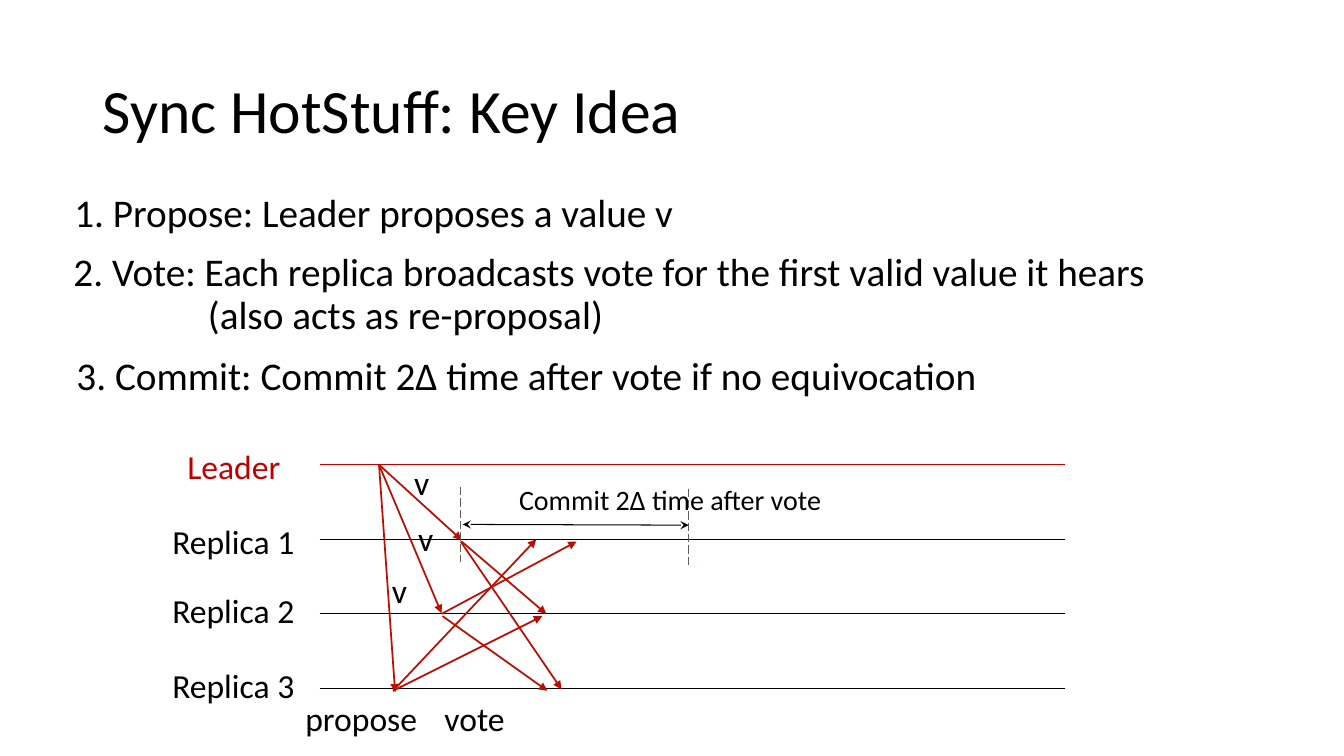
from dataclasses import dataclass

from pptx import Presentation
from pptx import util as u
from pptx.dml import color
from pptx.enum import dml, shapes, text
from pptx.oxml import ns, xmlchemy

WIDTH, HEIGHT = u.Inches(13.33), u.Inches(7.5)
BLACK, LEADER_RED, MESSAGE_RED, GRAY, WHITE = "000000", "C00000", "B91003", "635E5D", "FFFFFF"
FIRST_LANE, LANE_GAP = 61.47, 9.87
LANE_START, LANE_END = 23.78, 79.28
PLAIN_MARGINS = {"margin_left": u.Inches(0.1), "margin_right": u.Inches(0.1),
                 "margin_top": u.Inches(0.05), "margin_bottom": u.Inches(0.05)}
TEXT_FRAME = {**PLAIN_MARGINS, "word_wrap": True, "vertical_anchor": text.MSO_ANCHOR.TOP}
TITLE_FRAME = {**TEXT_FRAME, "vertical_anchor": text.MSO_ANCHOR.MIDDLE}
LABEL_FRAME = {**dict.fromkeys(PLAIN_MARGINS, u.Inches(0.1)), "word_wrap": False,
               "vertical_anchor": text.MSO_ANCHOR.MIDDLE,
               "auto_size": text.MSO_AUTO_SIZE.SHAPE_TO_FIT_TEXT}


@dataclass(frozen=True)
class Caption:
    lines: tuple[str, ...]
    left: float
    top: float
    width: float
    height: float
    size: int
    frame: dict
    hue: str = BLACK
    fill: str | None = None


@dataclass(frozen=True)
class Stroke:
    x1: float
    lane1: float
    x2: float
    lane2: float
    hue: str = BLACK
    weight: float = 0.75
    head: str | None = None
    tail: str | None = None
    dashed: bool = False


def rgb(hue: str) -> color.RGBColor:
    return color.RGBColor.from_string(hue)


def across(share: float) -> int:
    return round(WIDTH * share / 100)


def down(share: float) -> int:
    return round(HEIGHT * share / 100)


def lane_y(lane: float) -> int:
    return down(FIRST_LANE + lane * LANE_GAP)


def apply(target, values: dict) -> None:
    for name, value in values.items():
        setattr(target, name, value)


def draw_caption(slide, caption: Caption) -> None:
    box = slide.shapes.add_textbox(across(caption.left), down(caption.top),
                                   across(caption.width), down(caption.height))
    if caption.fill:
        box.fill.solid()
        box.fill.fore_color.rgb = rgb(caption.fill)
    frame = box.text_frame
    apply(frame, caption.frame)
    for index, line in enumerate(caption.lines):
        paragraph = frame.paragraphs[0] if index == 0 else frame.add_paragraph()
        apply(paragraph, {"line_spacing": 0.9, "space_before": u.Pt(0)})
        if index:
            paragraph._p.get_or_add_pPr().set("marL", str(across(10)))
        run = paragraph.add_run()
        run.text = line
        apply(run.font, {"name": "Calibri", "size": u.Pt(caption.size)})
        run.font.color.rgb = rgb(caption.hue)


def draw_stroke(slide, stroke: Stroke) -> None:
    connector = slide.shapes.add_connector(
        shapes.MSO_CONNECTOR.STRAIGHT, across(stroke.x1), lane_y(stroke.lane1),
        across(stroke.x2), lane_y(stroke.lane2))
    line = connector.line
    line.color.rgb = rgb(stroke.hue)
    line.width = u.Pt(stroke.weight)
    if stroke.dashed:
        line.dash_style = dml.MSO_LINE.LONG_DASH
    properties = connector._element.spPr
    for tag, kind in (("a:headEnd", stroke.head), ("a:tailEnd", stroke.tail)):
        if kind:
            end = xmlchemy.OxmlElement(tag)
            end.set("type", kind)
            properties.find(ns.qn("a:ln")).append(end)
    properties.append(xmlchemy.OxmlElement("a:effectLst"))


def label(name: str, left: float, top: float, width: float, hue: str = BLACK) -> Caption:
    return Caption((name,), left, top, width, 7.6, 24, LABEL_FRAME, hue, WHITE)


def message(x1: float, lane1: float, x2: float, lane2: float) -> Stroke:
    return Stroke(x1, lane1, x2, lane2, MESSAGE_RED, 1.25, tail="triangle")


STEPS = [
    Caption(("Sync HotStuff: Key Idea",), 6.9, 5.33, 86.27, 19.33, 44, TITLE_FRAME),
    Caption(("1. Propose: Leader proposes a value v",),
            4.8, 24.93, 78.25, 6.8, 28, TEXT_FRAME),
    Caption(("2. Vote: Each replica broadcasts vote for the first valid value it hears",
             "(also acts as re-proposal)"), 4.73, 32.8, 94.45, 12.5, 28, TEXT_FRAME),
    Caption(("3. Commit: Commit 2Δ time after vote if no equivocation",),
            4.95, 46.53, 74.94, 6.8, 28, TEXT_FRAME),
]
PHASES = [label("propose", 21.98, 91.47, 9.98), label("vote", 32.33, 91.47, 6)]
LANES = [Stroke(LANE_START, lane, LANE_END, lane, LEADER_RED if lane == 0 else BLACK)
         for lane in range(4)]
PROPOSALS = [message(28.2, 0, x, lane)
             for x, lane in ((34.35, 1.01), (32.85, 1.99), (29.4, 3.05))]
VOTES = [
    message(34.28, 1.03, 41.78, 3.01),
    message(34.35, 1.03, 40.65, 2),
    message(32.85, 2, 42.9, 1.03),
    message(32.93, 2.03, 40.73, 3.03),
    message(29.25, 3.03, 39.9, 1),
    message(29.25, 3.03, 40.35, 2.03),
]
PARTIES = [
    label("Replica 1", 12.08, 68.13, 10.73),
    label("Replica 2", 12.08, 77.2, 10.73),
    label("Replica 3", 12.08, 87.2, 10.73),
    label("Leader", 13.2, 58.13, 8.55, LEADER_RED),
]
VALUES = [Caption(("v",), left, top, 3, 6.8, 24, TEXT_FRAME)
          for left, top in ((30.08, 61.07), (30.38, 68.4), (28.43, 75.33))]
COMMIT_WAIT = [
    Stroke(34.43, 0.8, 51.24, 0.81, head="stealth", tail="stealth"),
    Stroke(34.28, 0.3, 34.28, 1.31, GRAY, dashed=True),
    Stroke(51.24, 0.32, 51.24, 1.34, GRAY, dashed=True),
]
COMMIT_NOTE = Caption(("Commit 2Δ time after vote",), 37.88, 63.73, 25.51, 7.6, 20, TEXT_FRAME)


def main() -> None:
    deck = Presentation()
    apply(deck, {"slide_width": WIDTH, "slide_height": HEIGHT})
    slide = deck.slides.add_slide(deck.slide_layouts[6])
    for part in [*STEPS, *PHASES, *LANES, *PROPOSALS, *VOTES, *PARTIES, *VALUES,
                 COMMIT_NOTE, *COMMIT_WAIT]:
        draw = draw_caption if isinstance(part, Caption) else draw_stroke
        draw(slide, part)
    deck.save("out.pptx")


if __name__ == "__main__":
    main()
